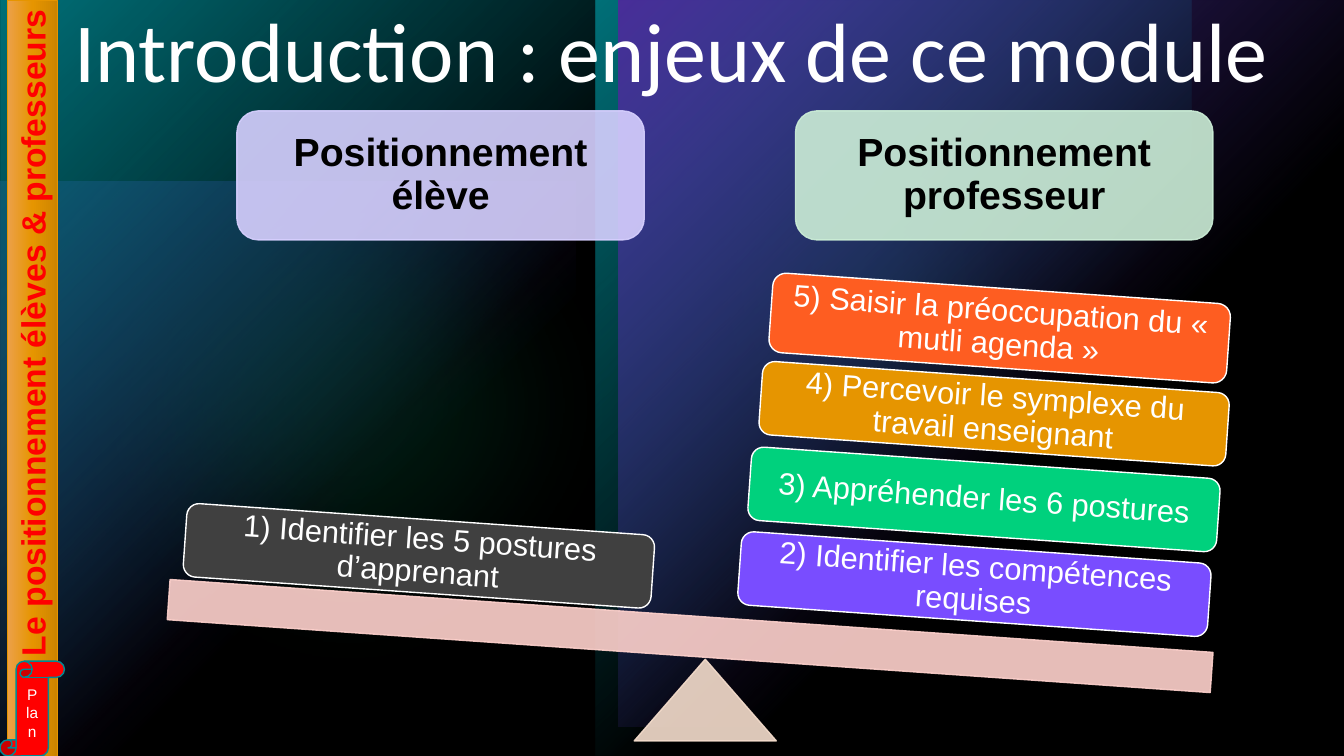
import pptx
import pptx.util
import pptx.dml.color
import pptx.enum.shapes
import pptx.enum.text
import pptx.oxml
import pptx.oxml.ns

Inches = pptx.util.Inches
Pt = pptx.util.Pt
RGBColor = pptx.dml.color.RGBColor
Shape = pptx.enum.shapes.MSO_SHAPE
Align = pptx.enum.text.PP_ALIGN
Anchor = pptx.enum.text.MSO_ANCHOR
NS = pptx.oxml.ns.nsdecls("a")

BLACK = RGBColor(0x00, 0x00, 0x00)
WHITE = RGBColor(0xFF, 0xFF, 0xFF)
RED = RGBColor(0xFF, 0x00, 0x00)
VIOLET = RGBColor(0x79, 0x4D, 0xFF)
GREEN = RGBColor(0x00, 0xD1, 0x7D)
CYAN = RGBColor(0x00, 0xBA, 0xC8)
TEAL = RGBColor(0x00, 0x8A, 0x94)
AMBER = RGBColor(0xE6, 0x95, 0x00)
AMBER_LIGHT = RGBColor(0xEC, 0xA1, 0x4B)
AMBER_DARK = RGBColor(0xCC, 0x84, 0x00)
ORANGE = RGBColor(0xFE, 0x5D, 0x21)
GREY = RGBColor(0x40, 0x40, 0x40)
LILAC = RGBColor(0xD7, 0xD0, 0xFF)
MINT = RGBColor(0xCC, 0xEE, 0xD7)
SAND = RGBColor(0xF5, 0xDD, 0xCC)
PINK = RGBColor(0xFF, 0xD2, 0xCD)
CIRCLE = ('<a:path path="circle"><a:fillToRect r="100000" b="100000"/>'
          '</a:path>')
DOWN = '<a:lin ang="5400000" scaled="0"/>'


def put_text(shape, text, size=22, color=WHITE, font="Arial", bold=False,
             align=Align.CENTER, space=0.9, inset=0.1):
    frame = shape.text_frame
    frame.word_wrap = True
    frame.vertical_anchor = Anchor.MIDDLE
    frame.margin_left = frame.margin_right = Inches(inset)
    frame.margin_top = frame.margin_bottom = Inches(min(inset, 0.05))
    para = frame.paragraphs[0]
    para.alignment = align
    para.line_spacing = space
    run = para.add_run()
    run.text = text
    run.font.size = Pt(size)
    run.font.name = font
    run.font.bold = bold
    run.font.color.rgb = color


def fade(fill, alpha):
    """Set the opacity, in percent, of a solid fill."""
    color = fill._xPr.find(".//" + pptx.oxml.ns.qn("a:srgbClr"))
    color.append(pptx.oxml.parse_xml(f'<a:alpha {NS} val="{alpha * 1000}"/>'))


class Board:
    """The slide, its style and its kinds of element."""
    tilt = 4

    def __init__(self, deck):
        self.slide = deck.slides.add_slide(deck.slide_layouts[6])
        back = self.slide.background.fill
        back.solid()
        back.fore_color.rgb = BLACK

    def shape(self, kind, box, fill=None, line=None, width=1, alpha=100,
              turn=0, flip=""):
        item = self.slide.shapes.add_shape(kind, *map(Inches, box))
        item.shadow.inherit = False
        item.rotation = turn
        for axis in flip:
            item._element.spPr.xfrm.set("flip" + axis, "1")
        if fill is not None:
            item.fill.solid()
            item.fill.fore_color.rgb = fill
        if line is None:
            item.line.fill.background()
        else:
            item.line.color.rgb = line
            item.line.width = Pt(width)
        if alpha < 100:
            fade(item.fill, alpha)
            if line is not None:
                fade(item.line.fill, alpha)
        return item

    def blend(self, box, stops, way, **style):
        """A rectangle with a gradient of (place, colour, opacity) stops."""
        item = self.shape(Shape.RECTANGLE, box, **style)
        marks = "".join(
            f'<a:gs pos="{at * 1000}"><a:srgbClr val="{color}">'
            f'<a:alpha val="{alpha * 1000}"/></a:srgbClr></a:gs>'
            for at, color, alpha in stops)
        item._element.spPr.find(pptx.oxml.ns.qn("a:prstGeom")).addnext(
            pptx.oxml.parse_xml(f'<a:gradFill {NS} rotWithShape="1"><a:gsLst>'
                                f'{marks}</a:gsLst>{way}</a:gradFill>'))
        return item

    def glow(self, box, color, alpha):
        """A soft-edged disc."""
        item = self.shape(Shape.OVAL, box, color, alpha=alpha, flip="V")
        item._element.spPr.find(pptx.oxml.ns.qn("a:effectLst")).append(
            pptx.oxml.parse_xml(f'<a:softEdge {NS} rad="1270000"/>'))

    def title(self, text, box):
        item = self.slide.shapes.add_textbox(*map(Inches, box))
        put_text(item, text, size=60, font="Calibri", align=Align.LEFT)

    def head(self, text, box, color):
        item = self.shape(Shape.ROUNDED_RECTANGLE, box, color, color, alpha=90)
        put_text(item, text, size=28, color=BLACK, bold=True, inset=0.12)

    def card(self, text, box, color):
        item = self.shape(Shape.ROUNDED_RECTANGLE, box, color, WHITE,
                          turn=self.tilt)
        put_text(item, text)


def main():
    deck = pptx.Presentation()
    deck.slide_width = Inches(13.33)
    deck.slide_height = Inches(7.5)
    board = Board(deck)

    # Coloured lights under a dark veil
    board.blend((0, 1.8, 5.71, 5.71), [(0, VIOLET, 60), (60, VIOLET, 0)],
                CIRCLE, flip="V")
    board.glow((6.29, 0.43, 4.72, 4.72), GREEN, 60)
    board.glow((0, 0.56, 6.94, 6.94), GREEN, 20)
    for box, color, flip in [((0, 0, 5.91, 7.5), CYAN, "V"),
                             ((5.91, 0, 5.91, 7.5), CYAN, "HV"),
                             ((6.13, 0, 7.21, 7.21), VIOLET, "V")]:
        board.blend(box, [(0, color, 100), (60, color, 0)], CIRCLE,
                    turn=180, flip=flip)
    board.shape(Shape.RECTANGLE, (0, 0, 13.33, 7.5), BLACK, alpha=40)

    # Title and side banner
    board.title("Introduction : enjeux de ce module", (0.64, 0, 12.57, 1.1))
    side = board.blend((-3.43, 3.5, 7.5, 0.5),
                       [(0, AMBER_LIGHT, 100), (50, AMBER, 100),
                        (100, AMBER_DARK, 100)],
                       DOWN, line=AMBER, width=0.5, turn=270)
    put_text(side, "Le positionnement élèves & professeurs", size=24,
             color=RED, bold=True, align=Align.RIGHT, space=1.0)
    scroll = board.shape(Shape.VERTICAL_SCROLL, (0, 6.56, 0.64, 0.94),
                         RED, TEAL)
    scroll.adjustments[0] = 0.25
    put_text(scroll, "Plan", size=11, space=1.0)

    # Column heads
    board.head("Positionnement élève", (2.35, 1.1, 4.04, 1.28), LILAC)
    board.head("Positionnement professeur", (7.89, 1.1, 4.14, 1.28), MINT)

    # Seesaw
    board.shape(Shape.ISOSCELES_TRIANGLE, (6.29, 6.54, 1.41, 0.81),
                SAND, SAND, alpha=90)
    board.shape(Shape.RECTANGLE, (1.66, 6.11, 10.37, 0.4), PINK, PINK,
                alpha=90, turn=board.tilt)

    # Cards on the seesaw
    for text, box, color in [
            ("2) Identifier les compétences requises",
             (7.33, 5.43, 4.67, 0.73), VIOLET),
            ("3) Appréhender les 6 postures",
             (7.43, 4.59, 4.66, 0.73), GREEN),
            ("4) Percevoir le symplexe du travail enseignant",
             (7.54, 3.74, 4.64, 0.73), AMBER),
            ("5) Saisir la préoccupation du « mutli agenda »",
             (7.64, 2.86, 4.55, 0.79), ORANGE),
            ("1) Identifier les 5 postures d’apprenant",
             (1.83, 5.15, 4.65, 0.73), GREY)]:
        board.card(text, box, color)

    deck.save("out.pptx")


if __name__ == "__main__":
    main()
